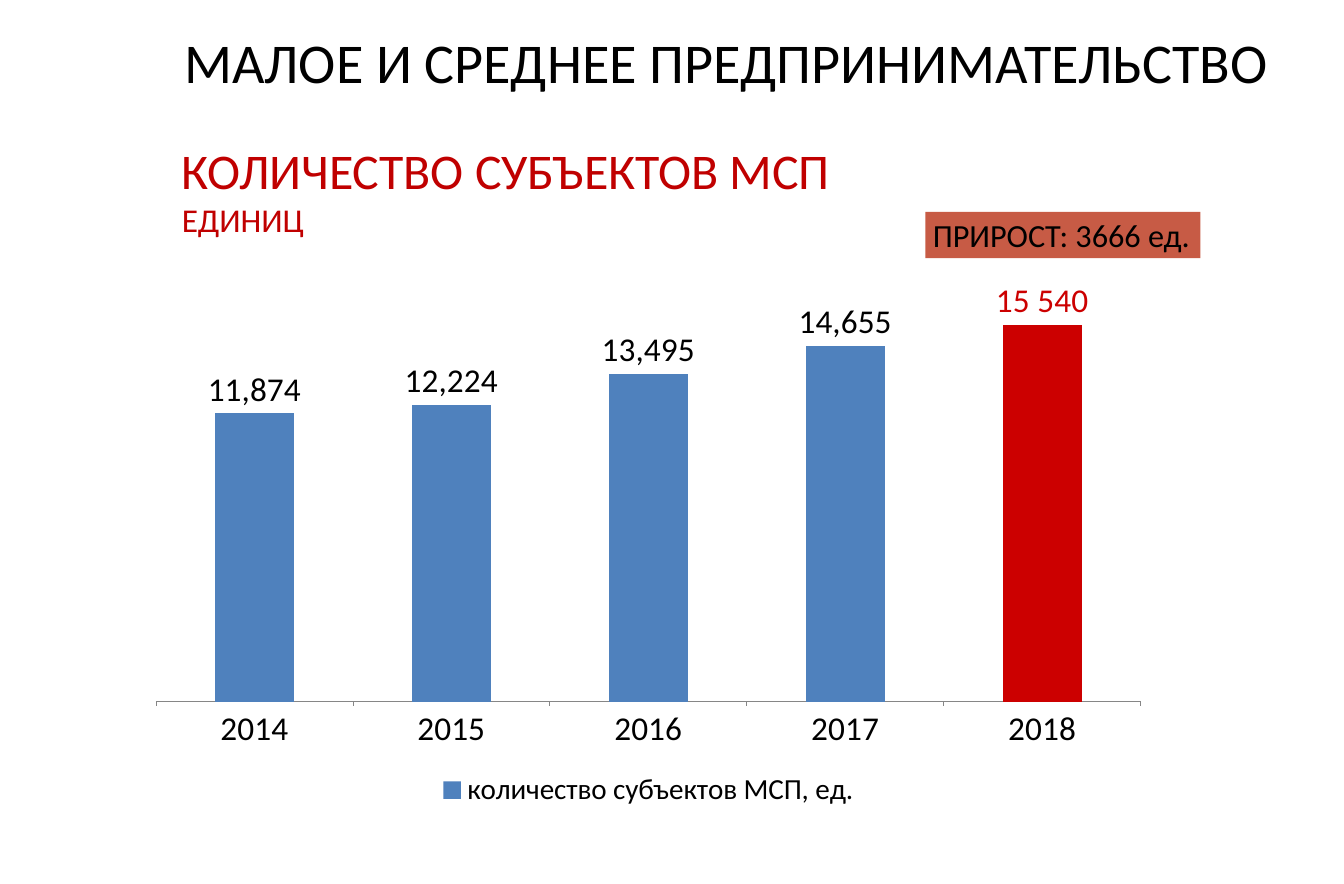
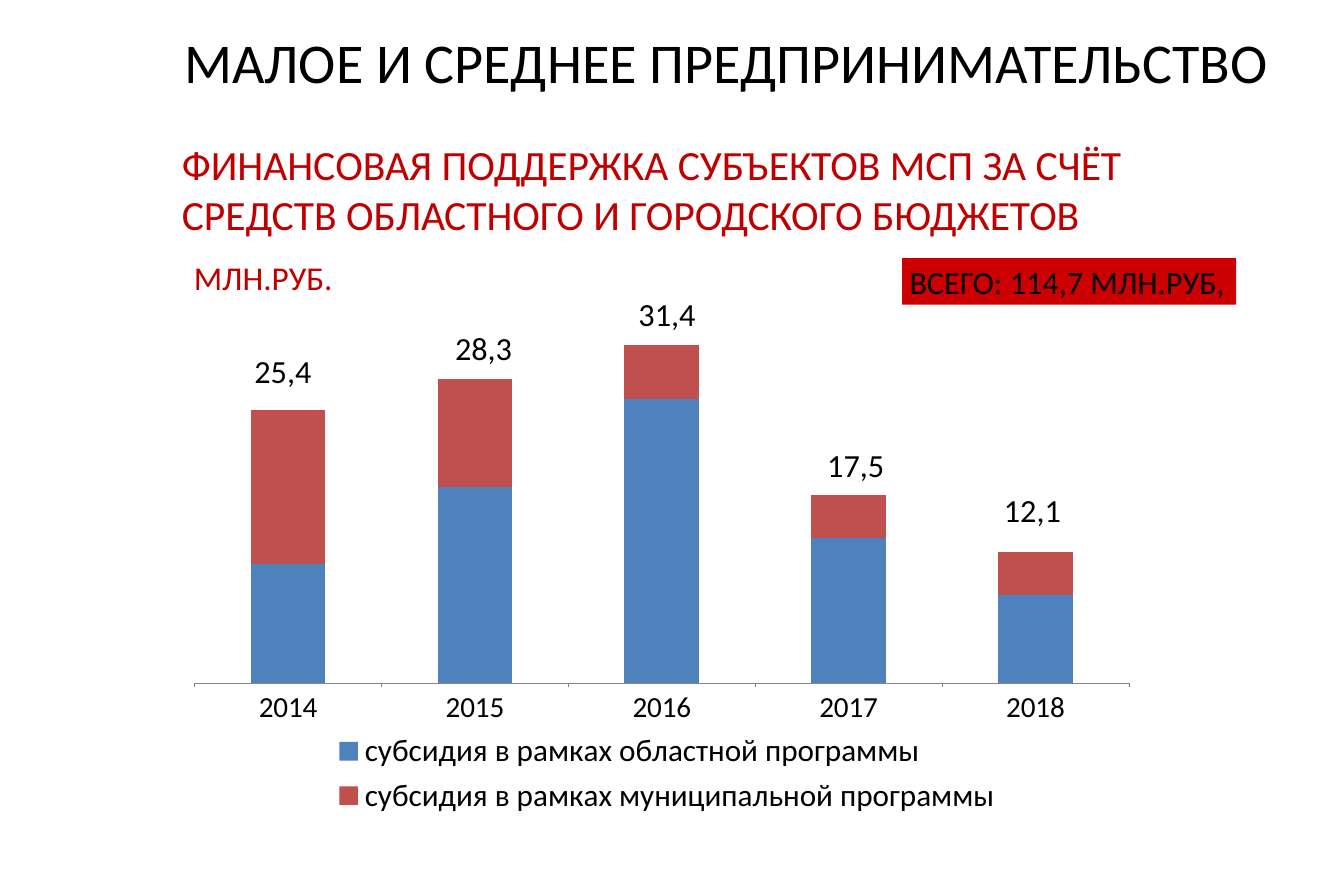
"""Two slides on small and medium business: entity counts and financial support."""
from dataclasses import dataclass

from lxml import etree
from pptx import Presentation
from pptx import util as u
from pptx.chart.data import CategoryChartData
from pptx.dml.color import RGBColor
from pptx.enum import chart as ch, shapes, text


@dataclass(frozen=True)
class Theme:
    font: str = "Calibri"
    ink: str = "000000"
    heading: str = "C00000"
    accent: str = "CC0000"
    growth: str = "C75B45"
    axis: str = "868686"
    series: tuple = ("4F81BD", "C0504D")
    title: int = 54
    unit: int = 32
    tag: int = 31


T = Theme()
W, H = u.Inches(17.95), u.Inches(11.81)
C_NS = "http://schemas.openxmlformats.org/drawingml/2006/chart"
YEARS = ["2014", "2015", "2016", "2017", "2018"]
TAG_H = 5.25
TOTAL_W = 5.4

SLIDES = [
    dict(
        heading=[("КОЛИЧЕСТВО СУБЪЕКТОВ МСП", 48), ("ЕДИНИЦ", T.unit)],
        heading_w=84.68,
        unit=None,
        badge=("ПРИРОСТ: 3666 ед.", T.growth, (68.86, 23.96, 20.45, TAG_H)),
        kind=ch.XL_CHART_TYPE.COLUMN_CLUSTERED,
        place=(10.08, 28.7, 76.32, 63.34),
        plot=(0.02, 0.02, 0.96, 0.78),
        series=[("количество субъектов МСП, ед.", (11874, 12224, 13495, 14655, 15540))],
        top=18000, overlap=0, axis_size=32, legend_size=28, number_format="#,##0",
        highlight=(4, "15 540"),
        totals=[],
    ),
    dict(
        heading=[("ФИНАНСОВАЯ ПОДДЕРЖКА СУБЪЕКТОВ МСП ЗА СЧЁТ", 40),
                 ("СРЕДСТВ ОБЛАСТНОГО И ГОРОДСКОГО БЮДЖЕТОВ", 40)],
        heading_w=73.43,
        unit="МЛН.РУБ.",
        badge=("ВСЕГО: 114,7 МЛН.РУБ,", T.accent, (67.13, 29.21, 24.85, TAG_H)),
        kind=ch.XL_CHART_TYPE.COLUMN_STACKED,
        place=(10.58, 32.85, 78.11, 60.03),
        plot=(0.05, 0.03, 0.89, 0.71),
        series=[("субсидия в рамках областной программы", (42, 69, 100, 51, 31)),
                ("субсидия в рамках муниципальной программы", (54, 38, 19, 15, 15))],
        top=132.5, overlap=100, axis_size=28, legend_size=30, number_format="0.0",
        highlight=None,
        totals=[("25,4", 18.38, 39.37), ("28,3", 33.31, 36.66), ("31,4", 46.96, 32.85),
                ("17,5", 61, 49.96), ("12,1", 74.15, 55.04)],
    ),
]


def at(x, y, w, h):
    """Turn percentages of the slide into left, top, width and height."""
    return int(W * x / 100), int(H * y / 100), int(W * w / 100), int(H * h / 100)


def write(sp, lines, color, wrap=True):
    """Fill a shape with (text, size) paragraphs, left and top aligned."""
    tf = sp.text_frame
    tf.word_wrap = wrap
    tf.auto_size = text.MSO_AUTO_SIZE.NONE
    tf.vertical_anchor = text.MSO_ANCHOR.TOP
    for i, (line, size) in enumerate(lines):
        p = tf.add_paragraph() if i else tf.paragraphs[0]
        p.text = line
        p.alignment = text.PP_ALIGN.LEFT
        p.font.name, p.font.size = T.font, u.Pt(size)
        p.font.color.rgb = RGBColor.from_string(color)


prs = Presentation()
prs.slide_width, prs.slide_height = W, H

for page in SLIDES:
    s = prs.slides.add_slide(prs.slide_layouts[5])
    title = s.shapes.title
    title.left, title.top, title.width, title.height = at(13.15, 2.71, 85.01, 10.67)
    write(title, [("МАЛОЕ И СРЕДНЕЕ ПРЕДПРИНИМАТЕЛЬСТВО", T.title)], T.ink)

    data = CategoryChartData(number_format=page["number_format"])
    data.categories = YEARS
    for name, values in page["series"]:
        data.add_series(name, values)
    chart = s.shapes.add_chart(page["kind"], *at(*page["place"]), data).chart
    chart.has_title = False
    chart.font.name, chart.font.size = T.font, u.Pt(10)
    chart.font.color.rgb = RGBColor.from_string(T.ink)

    chart.has_legend = True
    chart.legend.position = ch.XL_LEGEND_POSITION.BOTTOM
    chart.legend.include_in_layout = False
    chart.legend.font.size = u.Pt(page["legend_size"])

    years = chart.category_axis
    years.major_tick_mark = ch.XL_TICK_MARK.OUTSIDE
    years.tick_labels.font.size = u.Pt(page["axis_size"])
    years.format.line.color.rgb = RGBColor.from_string(T.axis)
    scale = chart.value_axis
    scale.visible = False
    scale.has_major_gridlines = False
    scale.minimum_scale, scale.maximum_scale = 0, page["top"]

    plot = chart.plots[0]
    plot.gap_width, plot.overlap = 150, page["overlap"]
    plot.vary_by_categories = False
    for series, color in zip(plot.series, T.series):
        series.format.fill.solid()
        series.format.fill.fore_color.rgb = RGBColor.from_string(color)

    area = chart.element.find(f".//{{{C_NS}}}plotArea")
    for old in area.findall(f"{{{C_NS}}}layout"):
        area.remove(old)
    layout = etree.Element(f"{{{C_NS}}}layout")
    manual = etree.SubElement(layout, f"{{{C_NS}}}manualLayout")
    settings = [("layoutTarget", "inner"), ("xMode", "edge"), ("yMode", "edge"),
                *zip("xywh", page["plot"])]
    for tag, value in settings:
        etree.SubElement(manual, f"{{{C_NS}}}{tag}").set("val", str(value))
    area.insert(0, layout)

    if page["highlight"]:
        index, label = page["highlight"]
        series = plot.series[0]
        labels = series.data_labels
        labels.show_value = True
        labels.number_format, labels.number_format_is_linked = page["number_format"], False
        labels.position = ch.XL_LABEL_POSITION.OUTSIDE_END
        labels.font.size = u.Pt(T.unit)
        point = series.points[index]
        point.format.fill.solid()
        point.format.fill.fore_color.rgb = RGBColor.from_string(T.accent)
        p = point.data_label.text_frame.paragraphs[0]
        r = p.add_run()
        r.text = label
        r.font.name, r.font.size = T.font, u.Pt(T.unit)
        r.font.color.rgb = RGBColor.from_string(T.accent)
        point.data_label.position = ch.XL_LABEL_POSITION.OUTSIDE_END

    heading = s.shapes.add_textbox(*at(12.98, 15.33, page["heading_w"], 12.28))
    write(heading, page["heading"], T.heading)

    if page["unit"]:
        unit = s.shapes.add_textbox(*at(13.87, 28.7, 14.48, 5.33))
        write(unit, [(page["unit"], T.unit)], T.heading)

    for total, x, y in page["totals"]:
        sp = s.shapes.add_textbox(*at(x, y, TOTAL_W, TAG_H))
        write(sp, [(total, T.tag)], T.ink, wrap=False)

    caption, fill, place = page["badge"]
    badge = s.shapes.add_shape(shapes.MSO_SHAPE.RECTANGLE, *at(*place))
    badge.shadow.inherit = False
    badge.fill.solid()
    badge.fill.fore_color.rgb = RGBColor.from_string(fill)
    badge.line.fill.background()
    write(badge, [(caption, T.tag)], T.ink, wrap=False)

prs.save("out.pptx")
